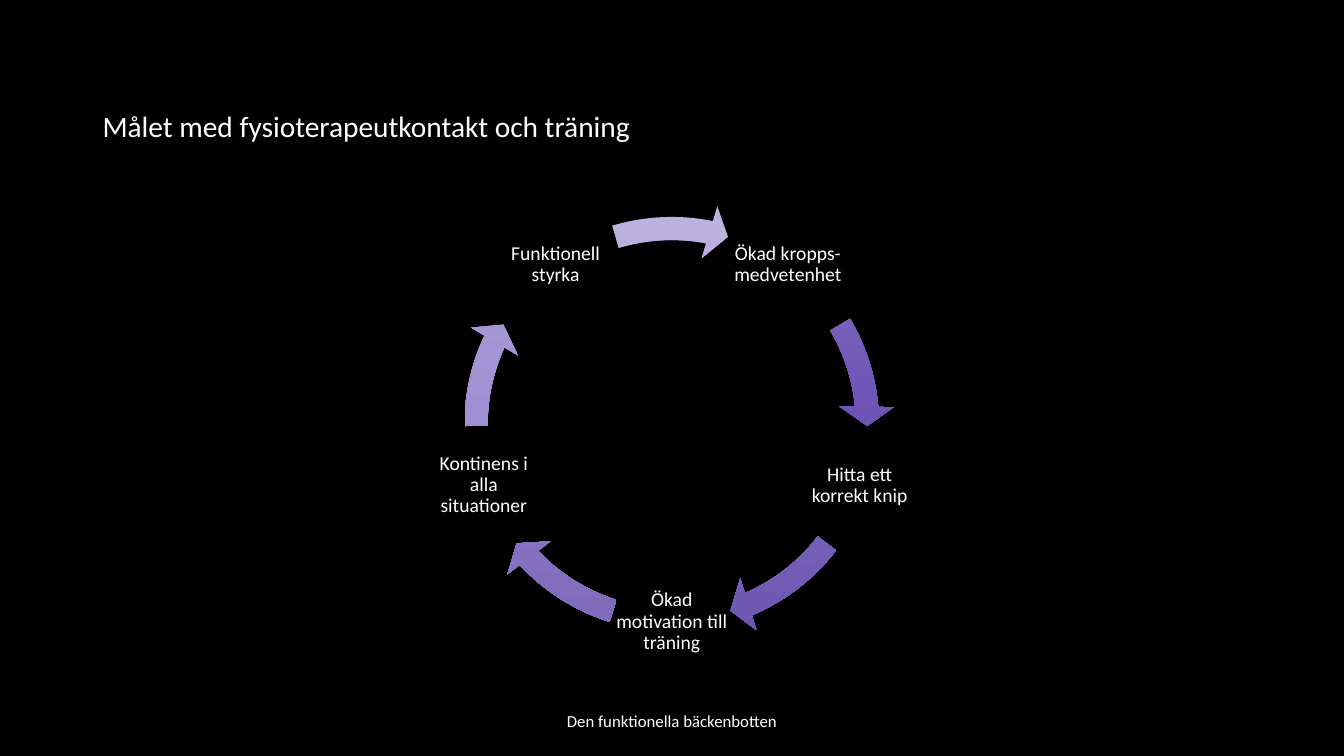
from copy import deepcopy
from math import cos, radians, sin

from pptx import Presentation
from pptx.dml.color import RGBColor
from pptx.enum.shapes import MSO_SHAPE
from pptx.enum.text import MSO_ANCHOR, PP_ALIGN
from pptx.oxml.ns import qn
from pptx.util import Cm, Pt

CIRCULAR_ARROW = MSO_SHAPE.CIRCULAR_ARROW
MIDDLE = MSO_ANCHOR.MIDDLE
LEFT, CENTER = PP_ALIGN.LEFT, PP_ALIGN.CENTER

TITLE = "Målet med fysioterapeutkontakt och träning"
FOOTER = "Den funktionella bäckenbotten"
# Label, arrow start and end in degrees, gradient from top to bottom
STEPS = [
    ("Ökad kropps- medvetenhet", 329.41, 354.92, ("826EBC", "6E52B8", "6044A9")),
    ("Hitta ett korrekt knip", 37.52, 66.95, ("8F7DC5", "7E67C2", "6E57B1")),
    ("Ökad motivation till träning", 107.46, 136.89, ("9D8ECE", "8F7BCB", "7D69B8")),
    ("Kontinens i alla situationer", 179.49, 205, ("ACA0D6", "9F90D4", "8C7CC0")),
    ("Funktionell styrka", 253.28, 281.13, ("BCB2DF", "B1A5DC", "9B8FC7")),
]
FONT, BLACK, WHITE = "Calibri", "000000", "FFFFFF"

# Ring geometry in centimetres and degrees
CENTER_X, CENTER_Y = 16.93, 10.69
LABEL_RADIUS, LABEL_SIZE, LABEL_INSET = 4.98, 3, 0.05
ARROW_SIZE = 11.23
FIRST_ANGLE = -54
ARROW_WIDTH, HEAD_WIDTH, HEAD_ANGLE = 0.052, 0.061, 5.59
DEGREE = 0.6  # one degree in adjustment units


def color(value):
    return RGBColor.from_string(value)


def write(box, text, size, align, spacing=1.0):
    frame = box.text_frame
    frame.word_wrap = True
    frame.vertical_anchor = MIDDLE
    para = frame.paragraphs[0]
    para.alignment = align
    para.line_spacing = spacing
    span = para.add_run()
    span.text = text
    span.font.name = FONT
    span.font.size = Pt(size)
    span.font.color.rgb = color(WHITE)
    return frame


def fill_gradient(shape, colors):
    """Fill with evenly spaced colours running from top to bottom."""
    shape.fill.gradient()
    shape.fill.gradient_angle = 270
    stop_list = shape.element.spPr.find(qn("a:gradFill")).find(qn("a:gsLst"))
    stop_list.insert(1, deepcopy(stop_list[0]))
    for index, (stop, value) in enumerate(zip(shape.fill.gradient_stops, colors)):
        stop.position = index / (len(colors) - 1)
        stop.color.rgb = color(value)


def add_label(page, text, angle):
    left = CENTER_X + LABEL_RADIUS * cos(radians(angle)) - LABEL_SIZE / 2
    top = CENTER_Y + LABEL_RADIUS * sin(radians(angle)) - LABEL_SIZE / 2
    box = page.shapes.add_textbox(Cm(left), Cm(top), Cm(LABEL_SIZE), Cm(LABEL_SIZE))
    frame = write(box, text, 14, CENTER, 0.9)
    frame.margin_left = frame.margin_right = Cm(LABEL_INSET)
    frame.margin_top = frame.margin_bottom = Cm(LABEL_INSET)


def add_arrow(page, start, end, colors):
    arrow = page.shapes.add_shape(
        CIRCULAR_ARROW,
        Cm(CENTER_X - ARROW_SIZE / 2), Cm(CENTER_Y - ARROW_SIZE / 2),
        Cm(ARROW_SIZE), Cm(ARROW_SIZE),
    )
    settings = (ARROW_WIDTH, HEAD_ANGLE * DEGREE, end * DEGREE, start * DEGREE, HEAD_WIDTH)
    for index, value in enumerate(settings):
        arrow.adjustments[index] = value
    fill_gradient(arrow, colors)
    arrow.line.fill.background()
    arrow.shadow.inherit = False


def main():
    deck = Presentation()
    deck.slide_width, deck.slide_height = Cm(33.87), Cm(19.05)
    page = deck.slides.add_slide(deck.slide_layouts[5])
    page.background.fill.solid()
    page.background.fill.fore_color.rgb = color(BLACK)

    title = page.shapes.title
    title.left, title.top, title.width, title.height = Cm(2.33), Cm(1.01), Cm(29.21), Cm(3.68)
    write(title, TITLE, 21, LEFT, 0.9).margin_top = Cm(0.9)

    footer = page.shapes.add_textbox(Cm(11.22), Cm(17.66), Cm(11.43), Cm(1.01))
    write(footer, FOOTER, 12, CENTER)

    for index, (text, start, end, colors) in enumerate(STEPS):
        add_label(page, text, FIRST_ANGLE + index * 360 / len(STEPS))
        add_arrow(page, start, end, colors)

    deck.save("out.pptx")


if __name__ == "__main__":
    main()
